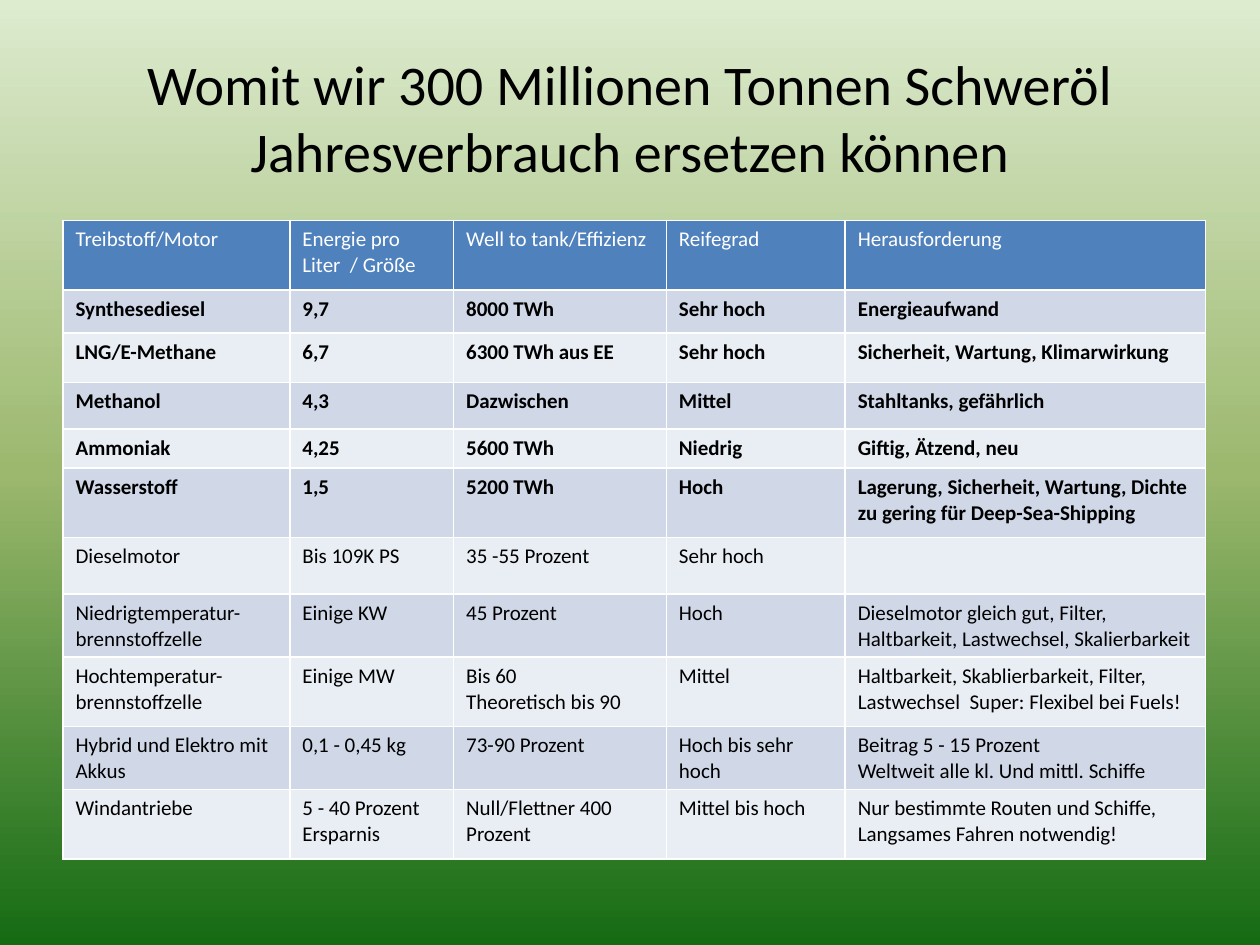
from lxml import etree
from pptx import Presentation
from pptx.dml.color import RGBColor
from pptx.enum.text import MSO_ANCHOR, PP_ALIGN
from pptx.oxml.ns import qn
from pptx.util import Pt

CENTER = PP_ALIGN.CENTER
MIDDLE = MSO_ANCHOR.MIDDLE

FONT = "Calibri"
BLACK = RGBColor(0x00, 0x00, 0x00)
WHITE = RGBColor(0xFF, 0xFF, 0xFF)
HEADER_BLUE = RGBColor(0x4F, 0x81, 0xBD)
BAND_DARK = RGBColor(0xD0, 0xD8, 0xE8)
BAND_LIGHT = RGBColor(0xE9, 0xED, 0xF4)
BACKGROUND_STOPS = [
    (0, RGBColor(0xDD, 0xEB, 0xCF)),
    (50, RGBColor(0x9C, 0xB8, 0x6E)),
    (100, RGBColor(0x15, 0x6B, 0x13)),
]

TITLE = "Womit wir 300 Millionen Tonnen Schweröl Jahresverbrauch ersetzen können"
COLUMN_WIDTHS = [129.6, 93.6, 121.6, 102.2, 206]
ROW_HEIGHTS = [39.6, 24.8, 28.2, 26.6, 22.4, 39.6, 32.4, 32.4, 39.6, 32.4, 39.6]
BOLD_ROWS = range(1, 6)  # the fuels; the engines follow
# "\n" starts a new paragraph, "\v" a new line in the same paragraph
ROWS = [
    ["Treibstoff/Motor", "Energie pro Liter  / Größe", "Well to tank/Effizienz",
     "Reifegrad", "Herausforderung"],
    ["Synthesediesel", "9,7", "8000 TWh", "Sehr hoch", "Energieaufwand"],
    ["LNG/E-Methane", "6,7", "6300 TWh aus EE", "Sehr hoch",
     "Sicherheit, Wartung, Klimarwirkung"],
    ["Methanol", "4,3", "Dazwischen", "Mittel", "Stahltanks, gefährlich"],
    ["Ammoniak", "4,25", "5600 TWh", "Niedrig", "Giftig, Ätzend, neu"],
    ["Wasserstoff", "1,5", "5200 TWh", "Hoch",
     "Lagerung, Sicherheit, Wartung, Dichte zu gering für Deep-Sea-Shipping"],
    ["Dieselmotor", "Bis 109K PS", "35 -55 Prozent", "Sehr hoch", ""],
    ["Niedrigtemperatur-brennstoffzelle", "Einige KW", "45 Prozent", "Hoch",
     "Dieselmotor gleich gut, Filter, Haltbarkeit, Lastwechsel, Skalierbarkeit"],
    ["Hochtemperatur-brennstoffzelle", "Einige MW",
     "Bis 60\nTheoretisch bis 90", "Mittel",
     "Haltbarkeit, Skablierbarkeit, Filter, Lastwechsel  Super: Flexibel bei Fuels!"],
    ["Hybrid und Elektro mit Akkus", "0,1 - 0,45 kg", "73-90 Prozent",
     "Hoch bis sehr hoch",
     "Beitrag 5 - 15 Prozent \vWeltweit alle kl. Und mittl. Schiffe"],
    ["Windantriebe", "5 - 40 Prozent  Ersparnis", "Null/Flettner 400 Prozent",
     "Mittel bis hoch",
     "Nur bestimmte Routen und Schiffe, Langsames Fahren notwendig!"],
]


def set_background(slide):
    """Fill the background with a vertical gradient of three stops."""
    fill = slide.background.fill
    fill.gradient()
    fill.gradient_angle = 270
    stops = slide.background._cSld.find(".//" + qn("a:gsLst"))
    for gs in list(stops):
        stops.remove(gs)
    for percent, color in BACKGROUND_STOPS:
        gs = etree.SubElement(stops, qn("a:gs"), pos=str(percent * 1000))
        etree.SubElement(gs, qn("a:srgbClr"), val=str(color))


def add_run(p, text, size, color, bold=False):
    r = p.add_run()
    r.text = text
    font = r.font
    font.name, font.size, font.bold = FONT, Pt(size), bold
    font.color.rgb = color


def add_title(slide):
    box = slide.shapes.add_textbox(Pt(36), Pt(21.6), Pt(648), Pt(90))
    tf = box.text_frame
    tf.word_wrap = True
    tf.vertical_anchor = MIDDLE
    p = tf.paragraphs[0]
    p.alignment = CENTER
    add_run(p, TITLE, 32, BLACK)


def set_borders(cell):
    tc_pr = cell._tc.get_or_add_tcPr()
    for side in ("a:lnL", "a:lnR", "a:lnT", "a:lnB"):
        ln = etree.SubElement(tc_pr, qn(side), w=str(Pt(1)))
        solid = etree.SubElement(ln, qn("a:solidFill"))
        etree.SubElement(solid, qn("a:srgbClr"), val=str(WHITE))


def fill_cell(cell, text, background, color, bold):
    set_borders(cell)
    cell.fill.solid()
    cell.fill.fore_color.rgb = background
    tf = cell.text_frame
    if not text:
        tf.paragraphs[0].font.size = Pt(12)
        return
    for i, paragraph in enumerate(text.split("\n")):
        p = tf.add_paragraph() if i else tf.paragraphs[0]
        for j, line in enumerate(paragraph.split("\v")):
            if j:
                p.add_line_break()
            add_run(p, line, 12, color, bold)


def add_fuel_table(slide):
    frame = slide.shapes.add_table(
        len(ROWS), len(COLUMN_WIDTHS), Pt(36), Pt(126),
        Pt(sum(COLUMN_WIDTHS)), Pt(sum(ROW_HEIGHTS)))
    table = frame.table
    for column, width in zip(table.columns, COLUMN_WIDTHS):
        column.width = Pt(width)
    for i, (row, height, texts) in enumerate(zip(table.rows, ROW_HEIGHTS, ROWS)):
        row.height = Pt(height)
        band = BAND_DARK if i % 2 else BAND_LIGHT
        background, color = (band, BLACK) if i else (HEADER_BLUE, WHITE)
        for cell, text in zip(row.cells, texts):
            fill_cell(cell, text, background, color, i in BOLD_ROWS)


def main():
    prs = Presentation()
    prs.slide_width, prs.slide_height = Pt(720), Pt(540)
    slide = prs.slides.add_slide(prs.slide_layouts[6])
    set_background(slide)
    add_title(slide)
    add_fuel_table(slide)
    prs.save("out.pptx")


if __name__ == "__main__":
    main()
